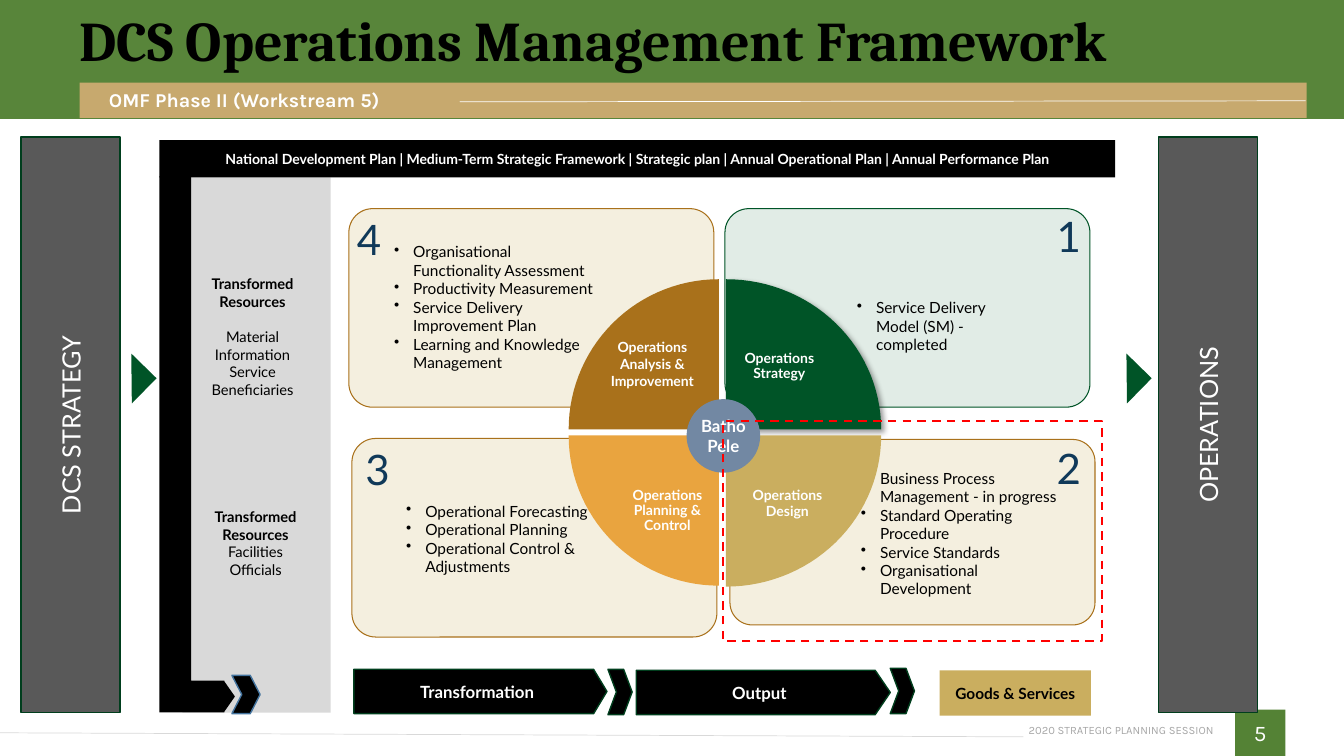
import math
from lxml import etree
from pptx import Presentation
from pptx import util as u
from pptx.dml.color import RGBColor
from pptx.enum import dml, shapes, text
from pptx.oxml import ns, parse_xml

# Content: boxes are (left, top, width, height) in inches
TITLE = "DCS Operations Management Framework"
SUBTITLE = "OMF Phase II (Workstream 5)"
FOOTER, PAGE = "2020 STRATEGIC PLANNING SESSION", "5"
SIDE_BARS = [("DCS STRATEGY", 0.21), ("OPERATIONS", 11.49)]
POINTERS = [11, 1.13]
PLANS = ["National Development Plan", "Medium-Term Strategic Framework", "Strategic plan",
         "Annual Operational Plan", "Annual Performance Plan"]
RESOURCES = [
    ((1.9, 2.68, 1.21, 1.63), ["Material", "Information", "Service Beneficiaries"], 12.6),
    ((1.93, 4.99, 1.21, 0.98), ["Facilities", "Officials"], 0),
]
STEPS = [("Transformation", (3.51, 6.64, 2.51, 0.44), 0.3, (6.03, 6.64)),
         ("Output", (6.31, 6.65, 2.52, 0.44), 0.34, (8.83, 6.63))]
PANELS = [  # number, number box, panel box, colours, bullet box, vertical anchor, bullets
    ("4", (3.39, 2.05, 0.54, 0.64), (3.46, 2.07, 3.62, 1.97), "sand",
     (3.81, 2.1, 2.24, 1.89), "MIDDLE",
     ["Organisational Functionality Assessment", "Productivity Measurement",
      "Service Delivery Improvement Plan", "Learning and Knowledge Management"]),
    ("3", (3.42, 4.3, 0.65, 0.7), (3.49, 4.35, 3.62, 1.97), "sand",
     (3.93, 4.93, 2.46, 1.14), "TOP",
     ["Operational Forecasting", "Operational Planning", "Operational Control & Adjustments"]),
    ("1", (10.39, 2.08, 0.42, 0.51), (7.19, 2.07, 3.62, 1.97), "mint",
     (8.4, 2.91, 1.55, 0.89), "TOP", ["Service Delivery Model (SM) - completed"]),
    ("2", (10.39, 4.47, 0.42, 0.34), (7.24, 4.36, 3.62, 1.84), "sand",
     (8.44, 4.6, 2.27, 1.52), "TOP",
     ["Business Process Management - in progress", "Standard Operating Procedure",
      "Service Standards", "Organisational Development"]),
]
QUADRANTS = [  # label, label centre, label width, line spacing, corner, radii, start angle, fill
    ("Operations Analysis & Improvement", (6.47, 3.61), 1.41, 1, (7.13, 4.26), (1.49, 1.49), 180, "bronze"),
    ("Operations Strategy", (7.73, 3.64), 1.04, 0.9, (7.2, 4.26), (1.54, 1.49), 270, "forest"),
    ("Operations Design", (7.81, 5.0), 1.04, 0.9, (7.2, 4.32), (1.54, 1.5), 0, "gold"),
    ("Operations Planning & Control", (6.62, 5.07), 1.13, 0.9, (7.13, 4.32), (1.49, 1.49), 90, "amber"),
]
HUB = "Batho Pele"

# Theme
THEME = {
    "colors": {"header": "58853A", "page": "548235", "tan": "C7A96E", "slate": "595959",
               "edge": "003E1D", "forest": "005427", "grey": "D9D9D9", "muted": "A6A6A6",
               "black": "000000", "white": "FFFFFF", "gold": "CAAE5F", "bronze": "A9711B",
               "amber": "E9A43F", "cream": "F4EFDF", "mint": "E1ECE6", "navy": "103959",
               "hub": "7288A3", "blue": "43739E", "red": "FF0000"},
    "panels": {"sand": ("cream", "bronze"), "mint": ("mint", "forest")},
    "type": {  # font, size, bold, colour
        "title": ("Cambria", 40, True, "black"), "subtitle": ("Karla", 14, True, "white"),
        "page": ("Karla", 16, False, "white"), "footer": ("Karla", 8, False, "muted"),
        "side": ("Lato", 18, False, "white"), "plans": ("Lato", 10, True, "white"),
        "head": ("Lato", 10.5, True, "black"), "body": ("Lato", 10.5, False, "black"),
        "step": ("Lato", 12, True, "white"), "goods": ("Lato", 11, True, "black"),
        "bullet": ("Lato", 11, False, "black"), "number": ("Lato", 30, False, "navy")},
}
SHAPE, ALIGN = shapes.MSO_SHAPE, text.PP_ALIGN

prs = Presentation()
prs.slide_width, prs.slide_height = u.Inches(13.33), u.Inches(7.5)
canvas = prs.slides.add_slide(prs.slide_layouts[6]).shapes


def color(name):
    return RGBColor.from_string(THEME["colors"][name])


def paint(part, fill=None, line=None, width=1):
    part.shadow.inherit = False
    if fill:
        part.fill.solid()
        part.fill.fore_color.rgb = color(fill)
    else:
        part.fill.background()
    if line:
        part.line.color.rgb = color(line)
        part.line.width = u.Pt(width)
    else:
        part.line.fill.background()
    return part


def block(kind, box, fill=None, line=None, width=1, adjust=(), rotation=0):
    part = canvas.add_shape(kind, *map(u.Inches, box))
    for i, value in enumerate(adjust):
        part.adjustments[i] = value
    part.rotation = rotation
    return paint(part, fill, line, width)


def write(part, lines, style, align="CENTER", anchor="MIDDLE", inset=None, **spacing):
    frame = part.text_frame
    frame.word_wrap = True
    frame.vertical_anchor = text.MSO_ANCHOR[anchor]
    if inset is not None:
        for side in ("left", "top", "right", "bottom"):
            setattr(frame, "margin_" + side, u.Inches(inset))
    for i, line in enumerate(lines):
        para = frame.paragraphs[0] if i == 0 else frame.add_paragraph()
        words, name = line if isinstance(line, tuple) else (line, style)
        font, size, bold, ink = THEME["type"][name]
        para.alignment = ALIGN[align]
        for key, value in spacing.items():
            setattr(para, key, value)
        run = para.add_run()
        run.text = words
        for key, value in {"name": font, "size": u.Pt(size), "bold": bold}.items():
            setattr(run.font, key, value)
        run.font.color.rgb = color(ink)
    return frame


def label(box, lines, style, **options):
    return write(canvas.add_textbox(*map(u.Inches, box)), lines, style, **options)


def rule(start, end, ink):
    line = canvas.add_connector(shapes.MSO_CONNECTOR.STRAIGHT, *map(u.Inches, start + end))
    line.line.color.rgb = color(ink)
    line.line.width = u.Pt(0.5)
    etree.SubElement(line._element.spPr, ns.qn("a:effectLst"))


def pointer(left):
    block(SHAPE.RIGHT_TRIANGLE, (left, 3.58, 0.35, 0.35), "forest", rotation=224.4)


# Footer and header
write(block(SHAPE.RECTANGLE, (12.25, 7.04, 0.5, 0.46), "page"), [PAGE], "page")
label((10.15, 7.18, 1.89, 0.13), [FOOTER], "footer", align="RIGHT", inset=0)
rule((10.15, 7.31), (0, 7.27), "grey")
block(SHAPE.RECTANGLE, (0, 0, 13.33, 1.18), "header")
block(SHAPE.RECTANGLE, (0.79, 0.82, 12.17, 0.35), "tan")
label((1.08, 0.87, 3.48, 0.24), [SUBTITLE], "subtitle", align="LEFT", inset=0)
rule((4.56, 1.01), (12.95, 1), "white")
label((0.69, -0.02, 12.56, 0.9), [TITLE], "title", align="LEFT", line_spacing=0.9)

# Side bars and pointers
for name, left in SIDE_BARS:
    bar = block(SHAPE.RECTANGLE, (left, 1.36, 0.98, 5.71), "slate", "edge")
    write(bar, [name], "side")
    bar.text_frame._txBody.bodyPr.set("vert", "vert270")
for left in POINTERS:
    pointer(left)

# Resources column and plans banner
block(SHAPE.RECTANGLE, (1.81, 1.76, 1.47, 5.31), "grey")
for box, items, gap in RESOURCES:
    frame = label(box, [("Transformed Resources", "head"), *items], "body", anchor="TOP")
    frame.paragraphs[1].space_before = u.Pt(gap)
write(block(SHAPE.RECTANGLE, (1.58, 1.39, 9.48, 0.37), "black"), [" | ".join(PLANS)], "plans")

# Process steps
write(block(SHAPE.RECTANGLE, (9.32, 6.65, 1.5, 0.45), "gold"), ["Goods & Services"], "goods")
for name, box, tip, chevron_at in STEPS:
    write(block(SHAPE.PENTAGON, box, "black", "edge", adjust=[tip]), [name], "step")
    block(SHAPE.CHEVRON, (*chevron_at, 0.24, 0.45), "black", "edge", adjust=[0.35])

# Numbered panels
for number, number_box, box, palette, list_box, anchor, bullets in PANELS:
    block(SHAPE.ROUNDED_RECTANGLE, box, *THEME["panels"][palette], 0.75, [0.12])
    frame = label(list_box, bullets, "bullet", align="LEFT", anchor=anchor)
    for para in frame.paragraphs:
        props = para._p.get_or_add_pPr()
        props.set("marL", str(u.Inches(0.19)))
        props.set("indent", str(-u.Inches(0.19)))
        etree.SubElement(props, ns.qn("a:buChar")).set("char", "•")
    label(number_box, [number], "number", inset=0)

# Quadrants of the wheel
for name, centre, width, spacing, (x, y), (rx, ry), start, fill in QUADRANTS:
    arc = [(u.Inches(x + rx * math.cos(math.radians(a))), u.Inches(y + ry * math.sin(math.radians(a))))
           for a in range(start, start + 91, 3)]
    outline = canvas.build_freeform(u.Inches(x), u.Inches(y))
    outline.add_line_segments(arc, close=True)
    quadrant = paint(outline.convert_to_shape(), fill)
    if name == "Operations Strategy":
        quadrant._element.spPr.find(ns.qn("a:effectLst")).append(parse_xml(
            f'<a:outerShdw {ns.nsdecls("a")} blurRad="{u.Pt(4)}" dist="{u.Pt(3)}" dir="2700000">'
            '<a:srgbClr val="000000"><a:alpha val="40000"/></a:srgbClr></a:outerShdw>'))
for name, (x, y), width, spacing, *_ in QUADRANTS:
    label((x - width / 2, y - 0.33, width, 0.66), [name], "plans", line_spacing=spacing)

# Hub, feed arrow and focus frame
write(block(SHAPE.OVAL, (6.81, 3.96, 0.73, 0.73), "hub"), [HUB], "step", inset=0)
block(SHAPE.BENT_UP_ARROW, (-0.7, 4.03, 5.31, 0.75), "black", adjust=[0.42, 0.2, 0.14], rotation=90)
block(SHAPE.CHEVRON, (2.3, 6.7, 0.28, 0.38), "black", "blue", adjust=[0.35])
focus = block(SHAPE.RECTANGLE, (7.17, 4.18, 3.76, 2.18), line="red", width=1.5)
focus.line.dash_style = dml.MSO_LINE.DASH

prs.save("out.pptx")
